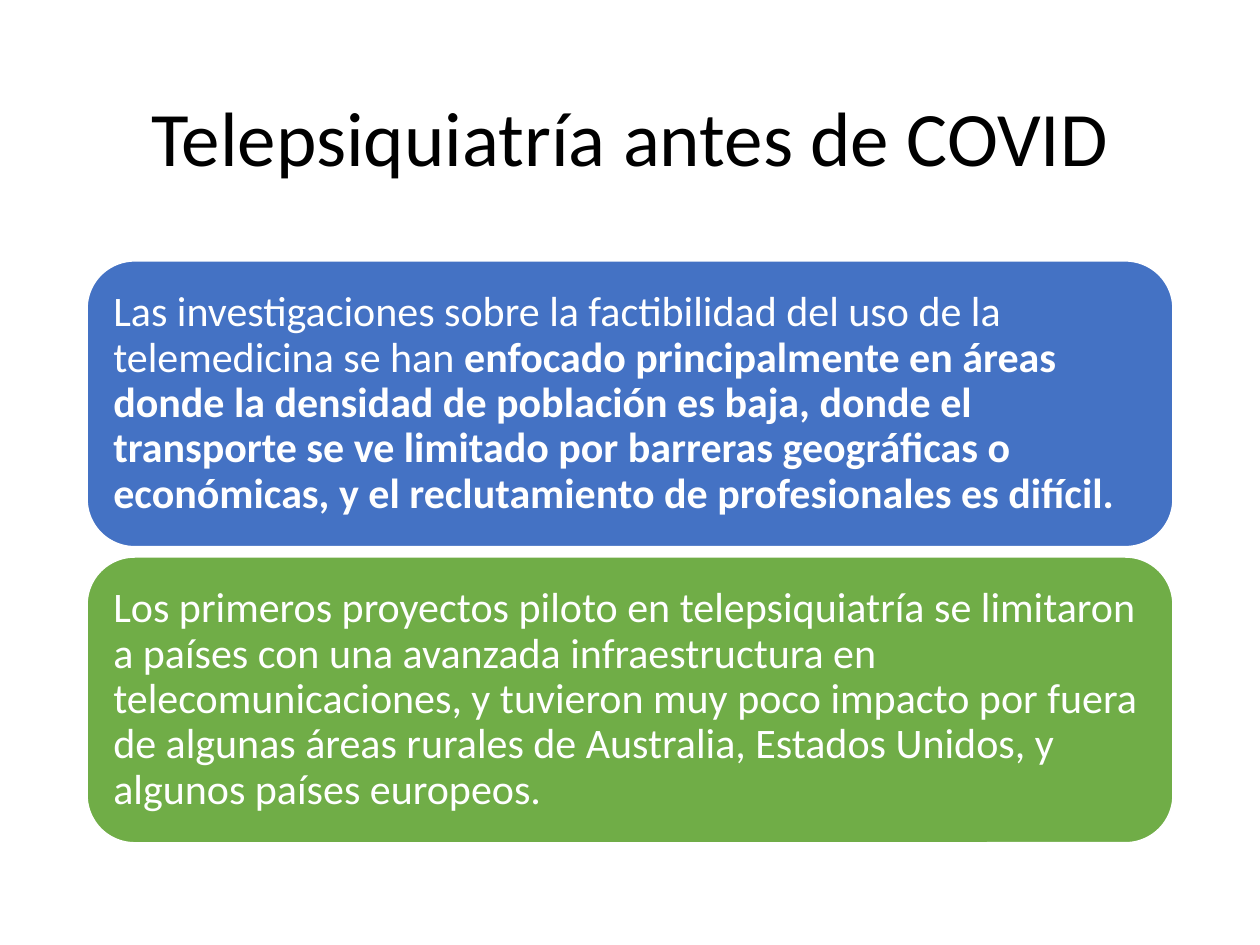
import pptx
import pptx.dml.color
import pptx.enum.shapes
import pptx.enum.text
import pptx.util
from pptx.util import Inches

LEFT, WIDTH = 0.69, 8.62
CARD_TOP, CARD_HEIGHT, CARD_GAP = 2.07, 2.27, 0.08

# Each card: fill colour and its (text, bold) runs
CARDS = [
    ("4472C4", [
        ("Las investigaciones sobre la factibilidad del uso de la telemedicina se han ", False),
        ("enfocado principalmente en áreas donde la densidad de población es baja, "
         "donde el transporte se ve limitado por barreras geográficas o económicas, "
         "y el reclutamiento de profesionales es difícil.", True),
    ]),
    ("70AD47", [
        ("Los primeros proyectos piloto en telepsiquiatría se limitaron a países con una "
         "avanzada infraestructura en telecomunicaciones, y tuvieron muy poco impacto por "
         "fuera de algunas áreas rurales de Australia, Estados Unidos, y algunos países "
         "europeos.", False),
    ]),
]


def color(value):
    return pptx.dml.color.RGBColor.from_string(value)


class SlideBuilder:
    font = "Calibri"
    title_color = "000000"
    card_color = "FFFFFF"
    title_size = 44
    card_size = 24

    def __init__(self, slide):
        self.slide = slide

    def add_text(self, shape, runs, size, text_color, alignment):
        """Fill a shape with one paragraph made of (text, bold) runs."""
        frame = shape.text_frame
        frame.word_wrap = True
        frame.vertical_anchor = pptx.enum.text.MSO_ANCHOR.MIDDLE
        frame.margin_left = frame.margin_right = Inches(0.1)
        frame.margin_top = frame.margin_bottom = Inches(0.1)
        paragraph = frame.paragraphs[0]
        paragraph.alignment = alignment
        paragraph.line_spacing = 0.9
        for text, bold in runs:
            run = paragraph.add_run()
            run.text = text
            run.font.name = self.font
            run.font.size = pptx.util.Pt(size)
            run.font.bold = bold
            run.font.color.rgb = color(text_color)

    def title(self, text, left, top, width, height):
        box = self.slide.shapes.add_textbox(
            Inches(left), Inches(top), Inches(width), Inches(height))
        self.add_text(box, [(text, False)], self.title_size, self.title_color,
                      pptx.enum.text.PP_ALIGN.CENTER)

    def card(self, runs, fill, left, top, width, height):
        shape = self.slide.shapes.add_shape(
            pptx.enum.shapes.MSO_SHAPE.ROUNDED_RECTANGLE,
            Inches(left), Inches(top), Inches(width), Inches(height))
        shape.shadow.inherit = False
        shape.fill.solid()
        shape.fill.fore_color.rgb = color(fill)
        shape.line.color.rgb = color(self.card_color)
        shape.line.width = pptx.util.Pt(1)
        self.add_text(shape, runs, self.card_size, self.card_color,
                      pptx.enum.text.PP_ALIGN.LEFT)


def main():
    presentation = pptx.Presentation()
    presentation.slide_width = Inches(10)
    presentation.slide_height = Inches(7.5)
    builder = SlideBuilder(presentation.slides.add_slide(presentation.slide_layouts[6]))
    builder.title("Telepsiquiatría antes de COVID", LEFT, 0.4, WIDTH, 1.45)
    for index, (fill, runs) in enumerate(CARDS):
        top = CARD_TOP + index * (CARD_HEIGHT + CARD_GAP)
        builder.card(runs, fill, LEFT, top, WIDTH, CARD_HEIGHT)
    presentation.save("out.pptx")


if __name__ == "__main__":
    main()
